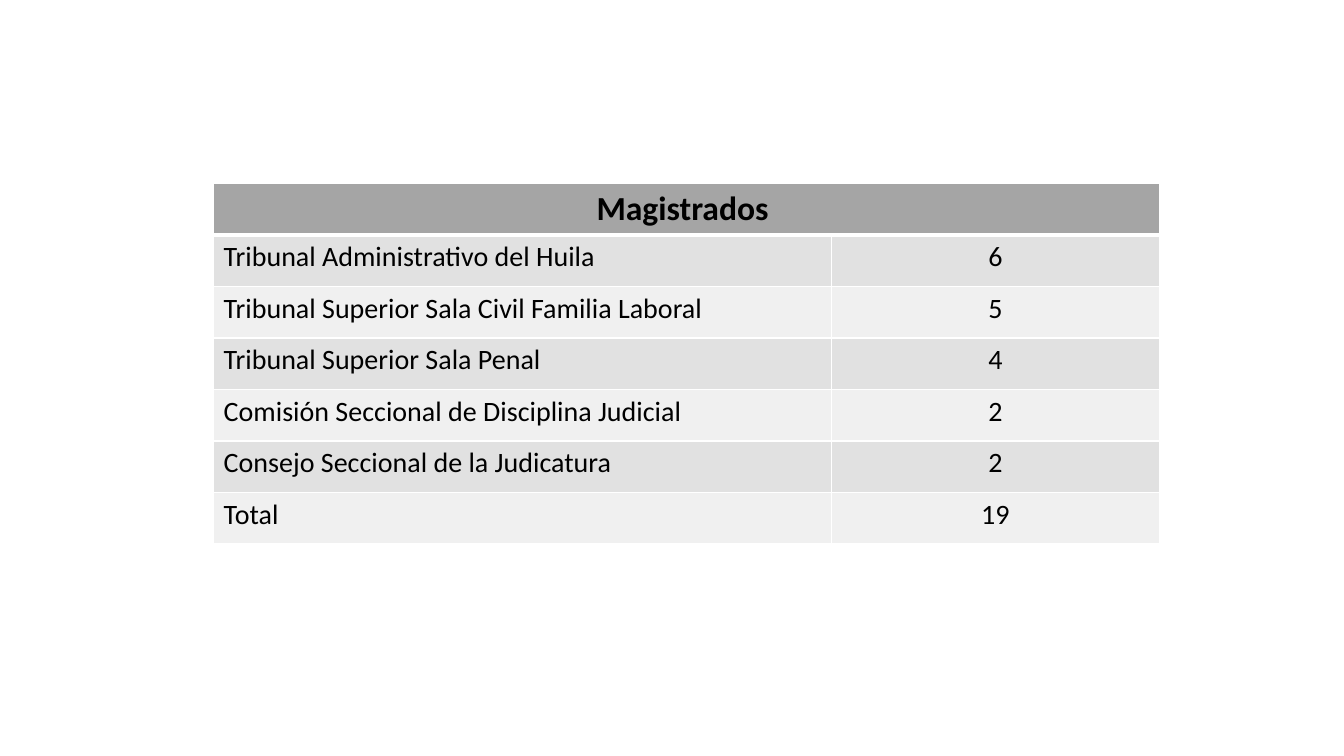
from lxml.etree import SubElement
from pptx import Presentation
from pptx.dml.color import RGBColor
from pptx.enum.text import PP_ALIGN as Align
from pptx.oxml.ns import qn
from pptx.util import Pt

COLORS = {"header": "A5A5A5", "dark_band": "E1E1E1", "light_band": "F0F0F0",
          "text": "000000", "border": "FFFFFF"}

HEADING = "Magistrados "
MAGISTRATES = [
    ("Tribunal Administrativo del Huila", "6"),
    ("Tribunal Superior Sala Civil Familia Laboral", "5"),
    ("Tribunal Superior Sala Penal", "4"),
    ("Comisión Seccional de Disciplina Judicial", "2"),
    ("Consejo Seccional de la Judicatura", "2"),
    ("Total", "19"),
]


class SlideBuilder:
    font = "Calibri"
    heading_size = 24
    body_size = 20

    def __init__(self, deck):
        self.slide = deck.slides.add_slide(deck.slide_layouts[6])

    def table(self, left, top, widths, row_height, heading, entries):
        """Add a table with a merged heading row above banded entries."""
        row_count = len(entries) + 1
        frame = self.slide.shapes.add_table(
            row_count, len(widths), Pt(left), Pt(top),
            Pt(sum(widths)), Pt(row_height * row_count))
        table = frame.table
        table.first_row = table.horz_banding = False
        for column, width in zip(table.columns, widths):
            column.width = Pt(width)
        for row in table.rows:
            row.height = Pt(row_height)

        header = table.cell(0, 0)
        header.merge(table.cell(0, len(widths) - 1))
        for cell in table.rows[0].cells:
            self.cell_style(cell, "header", bottom=3)
        self.cell_text(header, heading, self.heading_size, True, Align.CENTER)

        for row, entry in enumerate(entries, start=1):
            band = "dark_band" if row % 2 else "light_band"
            top_line = 3 if row == 1 else 1
            for column, text in enumerate(entry):
                cell = table.cell(row, column)
                self.cell_style(cell, band, top=top_line)
                align = Align.CENTER if column else Align.LEFT
                self.cell_text(cell, text, self.body_size, False, align)

    def cell_style(self, cell, color, top=1, bottom=1):
        """Set borders, then fill, in the order the file format requires."""
        properties = cell._tc.get_or_add_tcPr()
        for side, width in (("L", 1), ("R", 1), ("T", top), ("B", bottom)):
            line = SubElement(properties, qn(f"a:ln{side}"), w=str(Pt(width)))
            fill = SubElement(line, qn("a:solidFill"))
            SubElement(fill, qn("a:srgbClr"), val=COLORS["border"])
        cell.fill.solid()
        cell.fill.fore_color.rgb = RGBColor.from_string(COLORS[color])

    def cell_text(self, cell, text, size, bold, align):
        paragraph = cell.text_frame.paragraphs[0]
        paragraph.alignment = align
        run = paragraph.add_run()
        run.text = text
        run.font.name = self.font
        run.font.size = Pt(size)
        run.font.bold = bold
        run.font.color.rgb = RGBColor.from_string(COLORS["text"])


def main():
    deck = Presentation()
    deck.slide_width, deck.slide_height = Pt(960), Pt(540)
    builder = SlideBuilder(deck)
    builder.table(152.6, 131, (441.4, 234), 36.8, HEADING, MAGISTRATES)
    deck.save("out.pptx")


if __name__ == "__main__":
    main()
